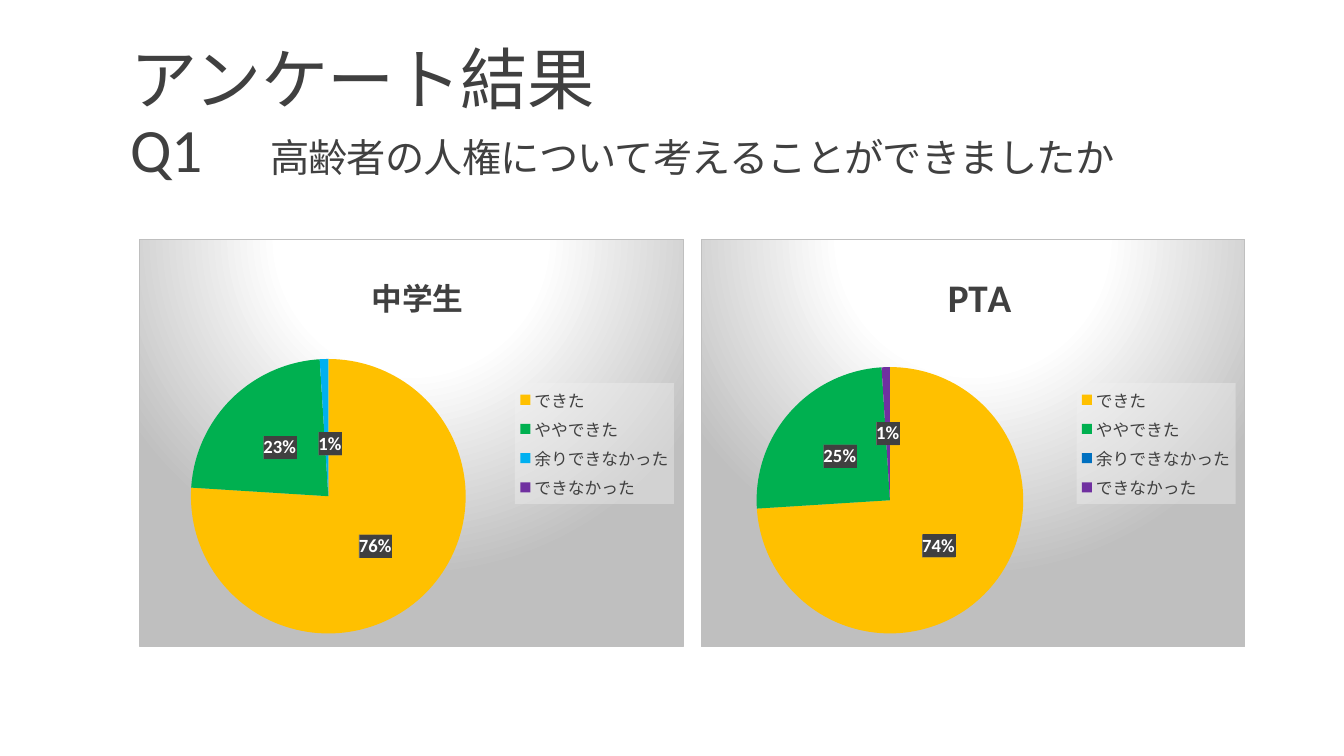
from copy import deepcopy
from dataclasses import dataclass

from lxml import etree
from pptx import Presentation
from pptx.chart.data import CategoryChartData
from pptx.dml.color import RGBColor
from pptx.enum.chart import XL_CHART_TYPE, XL_LABEL_POSITION, XL_LEGEND_POSITION
from pptx.enum.text import MSO_ANCHOR
from pptx.oxml import parse_xml
from pptx.oxml.ns import nsdecls, qn
from pptx.util import Pt

PX = 9144  # EMU in one px, 100 px to the inch


@dataclass(frozen=True)
class Theme:
    face: str = "Calibri"
    ink: str = "404040"
    light: str = "FFFFFF"
    edge: str = "BFBFBF"
    base: float = 10
    key: float = 12
    tag: float = 13.3
    head: float = 48
    mark: float = 44
    ask: float = 28


THEME = Theme()
ANSWERS = ["できた", "ややできた", "余りできなかった", "できなかった"]
HEADING = [("アンケート結果\v", THEME.head), ("Q1", THEME.mark),
           ("\u3000".strip() or chr(0x3000), THEME.head),
           ("高齢者の人権について考えることができましたか", THEME.ask)]

# Places inside a chart are px from its corner; shifts move single labels
CHARTS = [
    dict(left=695, name="PTA", size=28, title=(238, 25), pie=(55, 127, 265, 265),
         values=[74, 25, 0, 1], shifts={2: None},
         hues=["FFC000", "00B050", "0070C0", "7030A0"]),
    dict(left=138, name="中学生", size=22, title=(225, 26), pie=(51, 119, 273, 273),
         values=[76, 23, 1, 0], shifts={2: (4, 16), 3: (3, -19)},
         hues=["FFC000", "00B050", "00B0F0", "7030A0"]),
]

BACK = f"""<c:spPr {nsdecls('c', 'a')}><a:gradFill><a:gsLst>
<a:gs pos="0"><a:srgbClr val="{THEME.light}"/></a:gs>
<a:gs pos="39000"><a:srgbClr val="{THEME.light}"/></a:gs>
<a:gs pos="100000"><a:srgbClr val="{THEME.edge}"/></a:gs></a:gsLst>
<a:path path="circle"><a:fillToRect l="50000" t="-80000" r="50000" b="180000"/></a:path>
</a:gradFill><a:ln w="9525"><a:solidFill><a:srgbClr val="{THEME.edge}"/></a:solidFill></a:ln></c:spPr>"""
VEIL = f"""<c:spPr {nsdecls('c', 'a')}><a:solidFill><a:srgbClr val="F2F2F2">
<a:alpha val="39000"/></a:srgbClr></a:solidFill></c:spPr>"""
STRIPE = f"""<c:spPr {nsdecls('c', 'a')}><a:pattFill prst="dkVert">
<a:fgClr><a:srgbClr val="{THEME.ink}"/></a:fgClr>
<a:bgClr><a:srgbClr val="666666"/></a:bgClr></a:pattFill></c:spPr>"""


def style(font, size, color=THEME.ink, bold=False):
    for key, val in dict(name=THEME.face, size=Pt(size), bold=bold).items():
        setattr(font, key, val)
    font.color.rgb = RGBColor.from_string(color)


def layout(place, box, fixed=True, inner=False):
    """Manual layout element for px values, as shares of the chart box."""
    node = etree.Element(qn("c:layout"))
    manual = etree.SubElement(node, qn("c:manualLayout"))

    def put(tag, val):
        etree.SubElement(manual, qn("c:" + tag)).set("val", str(val))

    if inner:
        put("layoutTarget", "inner")
    if fixed:
        put("xMode", "edge")
        put("yMode", "edge")
    for tag, val, full in zip("xywh", place, box[2:] * 2):
        put(tag, round(val / full, 4))
    return node


def set_layout(owner, node, after=None):
    for old in owner.findall(qn("c:layout")):
        owner.remove(old)
    if after is None:
        owner.insert(0, node)
    else:
        owner.find(qn(after)).addnext(node)


def add_heading(slide, box):
    shape = slide.shapes.add_textbox(*(v * PX for v in box))
    frame = shape.text_frame
    frame.word_wrap = True
    frame.vertical_anchor = MSO_ANCHOR.BOTTOM
    para = frame.paragraphs[0]
    para.line_spacing = 0.85
    for text, size in HEADING:
        run = para.add_run()
        run.text = text.rstrip("\v")
        style(run.font, size)
        run.font._element.set("spc", "-50")
        if text.endswith("\v"):
            para.add_line_break()


def add_labels(series, shifts, box):
    labels = series.data_labels
    for key, val in dict(show_value=False, show_percentage=True, number_format="0%",
                         number_format_is_linked=False,
                         position=XL_LABEL_POSITION.CENTER).items():
        setattr(labels, key, val)
    style(labels.font, THEME.tag, THEME.light, True)
    root = labels._element
    root.find(qn("c:txPr")).addprevious(parse_xml(STRIPE))
    shared = [n for n in root if n.tag != qn("c:showLeaderLines")]
    # Single labels: moved, or left out where there is no shift
    for spot, (idx, shift) in enumerate(shifts.items()):
        label = etree.Element(qn("c:dLbl"))
        etree.SubElement(label, qn("c:idx")).set("val", str(idx))
        if shift is None:
            etree.SubElement(label, qn("c:delete")).set("val", "1")
        else:
            label.append(layout(shift, box, fixed=False))
            label.extend(deepcopy(shared))
        root.insert(spot, label)


def add_pie(slide, box, info):
    data = CategoryChartData()
    data.categories = ANSWERS
    data.add_series(info["name"], info["values"])
    chart = slide.shapes.add_chart(XL_CHART_TYPE.PIE, *(v * PX for v in box), data).chart
    style(chart.font, THEME.base, "000000")
    chart._chartSpace.find(qn("c:chart")).addnext(parse_xml(BACK))

    # Title
    chart.has_title = True
    title = chart.chart_title
    title.include_in_layout = False
    para = title.text_frame.paragraphs[0]
    run = para.add_run()
    run.text = info["name"]
    style(run.font, info["size"], bold=True)
    set_layout(title._element, layout(info["title"], box), "c:tx")

    # Legend
    chart.has_legend = True
    legend = chart.legend
    legend.position = XL_LEGEND_POSITION.RIGHT
    legend.include_in_layout = False
    style(legend.font, THEME.key)
    legend._element.find(qn("c:txPr")).addprevious(parse_xml(VEIL))
    set_layout(legend._element, layout((373, 143, 158, 120), box), "c:legendPos")

    # Slices
    plot = chart.plots[0]
    plot.vary_by_categories = True
    set_layout(plot._element.getparent(), layout(info["pie"], box, inner=True))
    series = plot.series[0]
    for idx, hue in enumerate(info["hues"]):
        fill = series.points[idx].format.fill
        fill.solid()
        fill.fore_color.rgb = RGBColor.from_string(hue)
    add_labels(series, info["shifts"], box)


def main():
    deck = Presentation()
    deck.slide_width, deck.slide_height = 1333 * PX, 750 * PX
    slide = deck.slides.add_slide(deck.slide_layouts[6])
    add_heading(slide, (120, 31, 1100, 159))
    for info in CHARTS:
        add_pie(slide, (info["left"], 237, 540, 405), info)
    deck.save("out.pptx")


if __name__ == "__main__":
    main()
